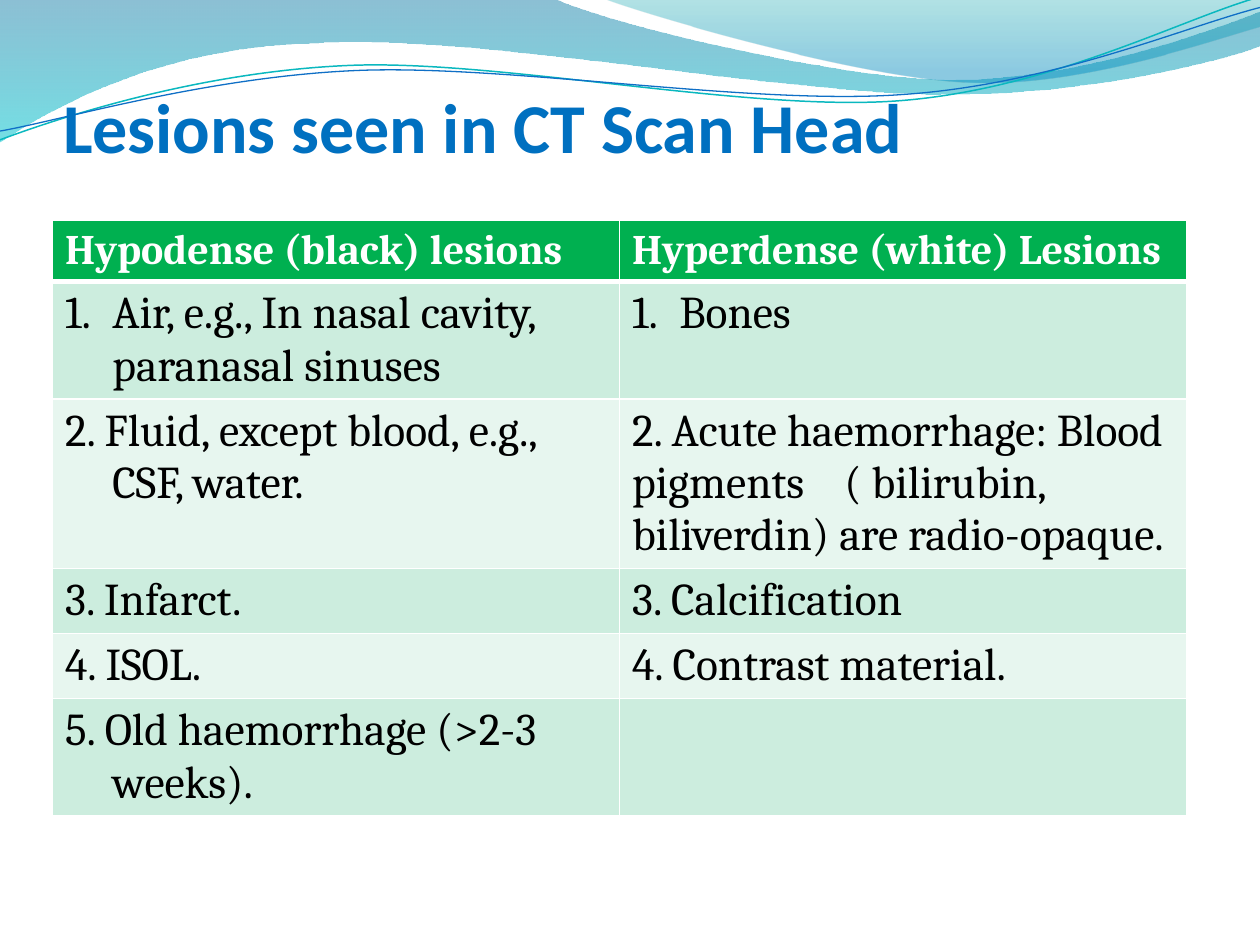
import dataclasses
import math
from typing import Optional

import lxml.etree
import pptx
import pptx.dml.color
import pptx.enum.text
import pptx.oxml.ns
import pptx.util

Pt = pptx.util.Pt
qn = pptx.oxml.ns.qn
INDENT = 27
TILT = -2.7


@dataclasses.dataclass
class Stop:
    position: float
    color: str
    opacity: int


@dataclasses.dataclass
class Wave:
    """An outline in points: pairs are straight steps, sixes are Bezier curves."""
    start: tuple
    steps: list
    stops: Optional[list] = None
    line: str = ""
    width: float = 0
    pivot: Optional[tuple] = None


@dataclasses.dataclass
class Entry:
    text: str
    hanging: bool = False
    numbered: bool = False
    tab: float = 0


@dataclasses.dataclass
class Row:
    height: float
    fill: str
    entries: tuple


WAVES = [
    Wave((0, 0), [
        (316.8, -0.7),
        (342.7, 12.2, 478.1, 45.4, 545.8, 45.4),
        (614.2, 45.4, 689.8, 18.7, 720, 6.5),
        (720.7, 25.9),
        (707.8, 31.7, 626.4, 54.7, 537.1, 54),
        (447.8, 54, 275, 20.2, 185, 24.5),
        (92.9, 25.9, 33.1, 59.8, -0.7, 81.4),
        (0, 0),
    ], stops=[Stop(0, "0074A1", 45), Stop(1, "00C6CF", 55)]),
    Wave((344.9, -0.7), [
        (366.5, 7.9, 491, 44.6, 553.7, 46.8),
        (616.3, 49.7, 691.9, 23, 720, 15.1),
        (720, 0),
        (344.9, -0.7),
    ], stops=[Stop(0, "00A1A9", 30), Stop(0.8, "008BBF", 45)]),
    Wave((0, 79.9), [
        (34.6, 67, 113.8, 41, 199.4, 37.4),
        (284.4, 33.8, 427, 64.1, 513.4, 57.6),
        (599.8, 51.1, 675.4, 10.8, 718.6, -1.4),
    ], line="0AB8BF", width=0.85, pivot=(359.3, 41.4)),
    Wave((0, 74.9), [
        (33.8, 69.1, 118.1, 43.9, 203.8, 40.3),
        (290.2, 36.7, 429.8, 60.5, 516.2, 54),
        (601.9, 48.2, 677.5, 15.1, 720, 4.3),
    ], line="0F6FC6", width=0.75, pivot=(359.6, 42.5)),
]

HEADER, DARK, LIGHT = "00B050", "CCEDDE", "E7F6EF"
ROWS = [
    Row(34.5, HEADER, (Entry("Hypodense (black) lesions"),
                       Entry("Hyperdense (white) Lesions"))),
    Row(67, DARK, (Entry("Air, e.g., In nasal cavity, paranasal sinuses", True, True),
                   Entry("Bones", True, True))),
    Row(97, LIGHT, (Entry("2. Fluid, except blood, e.g., CSF, water.", True),
                    Entry("2. Acute haemorrhage: Blood pigments\t( bilirubin, "
                          "biliverdin) are radio-opaque.", tab=121.3))),
    Row(37, DARK, (Entry("3. Infarct.", True), Entry("3. Calcification"))),
    Row(37, LIGHT, (Entry("4. ISOL.", True), Entry("4. Contrast material."))),
    Row(67, DARK, (Entry("5. Old haemorrhage (>2-3 weeks).", True), Entry(""))),
]


def rgb(color: str) -> pptx.dml.color.RGBColor:
    return pptx.dml.color.RGBColor.from_string(color)


def style_font(paragraph, name: str, size: float, color: str, bold: bool) -> None:
    font = paragraph.font
    font.name, font.size, font.bold = name, Pt(size), bold
    font.color.rgb = rgb(color)


def level(point: tuple, pivot: tuple) -> tuple:
    """Turn a point about the pivot so that the tilt of its shape is undone."""
    angle = math.radians(-TILT)
    x, y = point[0] - pivot[0], point[1] - pivot[1]
    return (pivot[0] + x * math.cos(angle) - y * math.sin(angle),
            pivot[1] + x * math.sin(angle) + y * math.cos(angle))


def bend(shape, steps: list) -> None:
    """Join the three segments of each six-number step into one Bezier curve."""
    segments = iter(list(shape.element.iter(qn("a:lnTo"))))
    for step in steps:
        group = [next(segments) for _ in range(len(step) // 2)]
        if len(group) == 1:
            continue
        curve = lxml.etree.Element(qn("a:cubicBezTo"))
        group[0].addprevious(curve)
        for segment in group:
            curve.append(segment[0])
            segment.getparent().remove(segment)


def draw_wave(page, wave: Wave) -> None:
    points = [wave.start]
    for step in wave.steps:
        points += zip(step[::2], step[1::2])
    if wave.pivot:
        points = [level(point, wave.pivot) for point in points]
    points = [(Pt(x), Pt(y)) for x, y in points]
    builder = page.shapes.build_freeform(*points[0])
    builder.add_line_segments(points[1:], close=bool(wave.stops))
    shape = builder.convert_to_shape()
    bend(shape, wave.steps)
    shape.shadow.inherit = False
    if wave.pivot:
        shape.rotation = TILT
    if not wave.stops:
        shape.fill.background()
        shape.line.color.rgb = rgb(wave.line)
        shape.line.width = Pt(wave.width)
        return
    shape.line.fill.background()
    shape.fill.gradient()
    shape.fill.gradient_angle = 270
    for target, stop in zip(shape.fill.gradient_stops, wave.stops):
        target.position = stop.position
        target.color.rgb = rgb(stop.color)
    for node, stop in zip(shape.element.spPr.iter(qn("a:srgbClr")), wave.stops):
        lxml.etree.SubElement(node, qn("a:alpha"), val=str(stop.opacity * 1000))


def draw_title(page, text: str) -> None:
    title = page.shapes.title
    title.left, title.top, title.width, title.height = Pt(36), Pt(21.6), Pt(588), Pt(74)
    frame = title.text_frame
    frame.text = text
    frame.word_wrap = True
    frame.vertical_anchor = pptx.enum.text.MSO_ANCHOR.BOTTOM
    frame.margin_left = frame.margin_right = frame.margin_bottom = 0
    frame.margin_top = Pt(3.6)
    frame.paragraphs[0].alignment = pptx.enum.text.PP_ALIGN.LEFT
    style_font(frame.paragraphs[0], "Calibri", 40, "0070C0", True)
    title.element.getparent().append(title.element)


def set_border(cell, side: str, width: float) -> None:
    properties = cell._tc.get_or_add_tcPr()
    line = lxml.etree.SubElement(properties, qn(f"a:ln{side}"), w=str(Pt(width)))
    fill = lxml.etree.SubElement(line, qn("a:solidFill"))
    lxml.etree.SubElement(fill, qn("a:srgbClr"), val="FFFFFF")


def fill_cell(cell, entry: Entry, row_index: int, color: str) -> None:
    for side in "LRTB":
        thick = (row_index, side) in ((0, "B"), (1, "T"))
        set_border(cell, side, 3 if thick else 1)
    cell.fill.solid()
    cell.fill.fore_color.rgb = rgb(color)
    cell.text = entry.text
    paragraph = cell.text_frame.paragraphs[0]
    properties = paragraph._p.get_or_add_pPr()
    if entry.hanging:
        properties.set("marL", str(Pt(INDENT)))
        properties.set("indent", str(-Pt(INDENT)))
    if entry.numbered:
        lxml.etree.SubElement(properties, qn("a:buAutoNum"), type="arabicPeriod")
    if entry.tab:
        tabs = lxml.etree.SubElement(properties, qn("a:tabLst"))
        lxml.etree.SubElement(tabs, qn("a:tab"), pos=str(Pt(entry.tab)), algn="l")
    if row_index == 0:
        style_font(paragraph, "Cambria", 24, "FFFFFF", True)
    else:
        style_font(paragraph, "Cambria", 26, "000000", False)


def draw_table(page, rows: list) -> None:
    height = sum(row.height for row in rows)
    table = page.shapes.add_table(len(rows), 2, Pt(30), Pt(126), Pt(648), Pt(height)).table
    for row_index, row in enumerate(rows):
        table.rows[row_index].height = Pt(row.height)
        for column, entry in enumerate(row.entries):
            fill_cell(table.cell(row_index, column), entry, row_index, row.fill)


deck = pptx.Presentation()
deck.slide_width, deck.slide_height = Pt(720), Pt(540)
page = deck.slides.add_slide(deck.slide_layouts[5])
for wave in WAVES:
    draw_wave(page, wave)
draw_title(page, "Lesions seen in CT Scan Head")
draw_table(page, ROWS)
deck.save("out.pptx")
